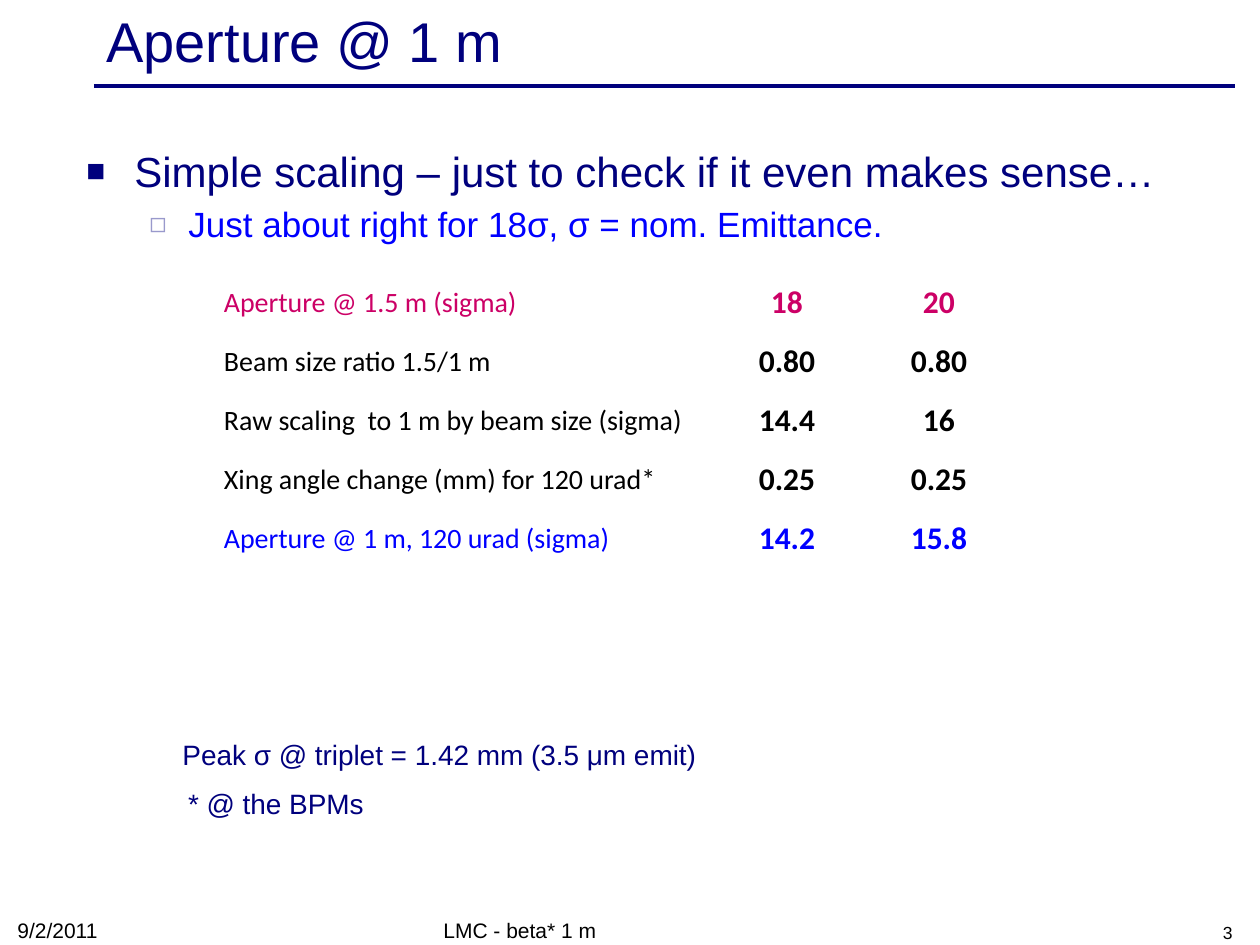
from lxml.etree import SubElement
from pptx import Presentation
from pptx.dml.color import RGBColor
from pptx.enum.shapes import MSO_CONNECTOR as Connector
from pptx.enum.text import MSO_ANCHOR as Anchor, PP_ALIGN as Align
from pptx.oxml.ns import qn
from pptx.util import Emu, Pt

NAVY = RGBColor(0x00, 0x00, 0x7D)
LAVENDER = RGBColor(0x99, 0x99, 0xCC)
BLUE = RGBColor(0x00, 0x00, 0xFF)
CRIMSON = RGBColor(0xCC, 0x00, 0x66)
BLACK = RGBColor(0x00, 0x00, 0x00)

ROWS = [
    ("Aperture @ 1.5 m (sigma)", "18", "20", CRIMSON),
    ("Beam size ratio 1.5/1 m", "0.80", "0.80", BLACK),
    ("Raw scaling  to 1 m by beam size (sigma)", "14.4", "16", BLACK),
    ("Xing angle change (mm) for 120 urad*", "0.25", "0.25", BLACK),
    ("Aperture @ 1 m, 120 urad (sigma)", "14.2", "15.8", BLUE),
]
COLUMN_WIDTHS = [488, 152, 152]
ROW_HEIGHT = 59


def px(length):
    return Emu(length * 914400 // 126)


def write(para, text, size=16, color=NAVY, font="Arial", bold=False,
          align=Align.LEFT, before=0):
    para.alignment = align
    para.space_before = Pt(before)
    span = para.add_run()
    span.text = text
    span.font.name = font
    span.font.size = Pt(size)
    span.font.bold = bold
    span.font.color.rgb = color


def add_bullet(para, mark, color, percent, margin, hang):
    props = para._p.get_or_add_pPr()
    props.set("marL", str(px(margin)))
    props.set("indent", str(-px(hang)))
    tint = SubElement(props, qn("a:buClr"))
    SubElement(tint, qn("a:srgbClr"), val=str(color))
    SubElement(props, qn("a:buSzPct"), val=str(percent * 1000))
    SubElement(props, qn("a:buFont"), typeface="Arial")
    SubElement(props, qn("a:buChar"), char=mark)


def add_frame(page, left, top, width, height, anchor=Anchor.TOP, wrap=True):
    box = page.shapes.add_textbox(px(left), px(top), px(width), px(height))
    frame = box.text_frame
    frame.word_wrap = wrap
    frame.vertical_anchor = anchor
    return frame


def add_header(page, left, top, width, height):
    rule_y = px(top + 82)
    rule = page.shapes.add_connector(
        Connector.STRAIGHT, px(left), rule_y, px(left + 1141), rule_y)
    rule.line.color.rgb = NAVY
    rule.line.width = Pt(2)
    SubElement(rule._element.spPr, qn("a:effectLst"))
    frame = add_frame(page, left, top, width, height, Anchor.MIDDLE)
    write(frame.paragraphs[0], "Aperture @ 1 m", size=32)


def add_body(page, left, top, width, height):
    frame = add_frame(page, left, top, width, height)
    point = frame.paragraphs[0]
    add_bullet(point, "■", NAVY, 75, 48, 48)
    write(point, "Simple scaling – just to check if it even makes sense…", size=24)
    detail = frame.add_paragraph()
    detail.level = 1
    add_bullet(detail, "◻", LAVENDER, 80, 102, 39)
    write(detail, "Just about right for 18σ, σ = nom. Emittance.",
          size=20, color=BLUE, before=4)


def add_aperture_table(page, left, top):
    table = page.shapes.add_table(
        len(ROWS), len(COLUMN_WIDTHS), px(left), px(top),
        px(sum(COLUMN_WIDTHS)), px(ROW_HEIGHT * len(ROWS))).table
    table.first_row = False
    table.horz_banding = False
    for column, width in zip(table.columns, COLUMN_WIDTHS):
        column.width = px(width)
    for row, (*texts, color) in zip(table.rows, ROWS):
        row.height = px(ROW_HEIGHT)
        for index, (cell, text) in enumerate(zip(row.cells, texts)):
            cell.fill.background()
            cell.vertical_anchor = Anchor.MIDDLE
            cell.margin_left = cell.margin_right = cell.margin_top = px(1)
            cell.margin_bottom = 0
            is_value = index > 0
            write(cell.text_frame.paragraphs[0], text, font="Calibri",
                  color=color, size=18 if is_value else 16, bold=is_value,
                  align=Align.CENTER if is_value else Align.LEFT)


def add_note(page, text, left, top, width, height):
    frame = add_frame(page, left, top, width, height, wrap=False)
    write(frame.paragraphs[0], text, align=Align.CENTER)


def add_footer(page, top, height):
    entries = [
        ("9/2/2011", 5, 294, 12, Align.LEFT),
        ("LMC - beta* 1 m", 431, 399, 12, Align.LEFT),
        ("3", 951, 294, 10, Align.RIGHT),
    ]
    for text, left, width, size, align in entries:
        frame = add_frame(page, left, top, width, height, Anchor.BOTTOM)
        write(frame.paragraphs[0], text, size=size, color=BLACK, align=align)


def main():
    deck = Presentation()
    deck.slide_width, deck.slide_height = px(1260), px(945)
    page = deck.slides.add_slide(deck.slide_layouts[6])
    add_header(page, 94, 4, 1134, 72)
    add_body(page, 74, 139, 1134, 159)
    add_aperture_table(page, 223, 273)
    add_note(page, "Peak σ @ triplet = 1.42 mm (3.5 μm emit)", 164, 731, 551, 47)
    add_note(page, "* @ the BPMs", 174, 780, 204, 47)
    add_footer(page, 913, 36)
    deck.save("out.pptx")


if __name__ == "__main__":
    main()
